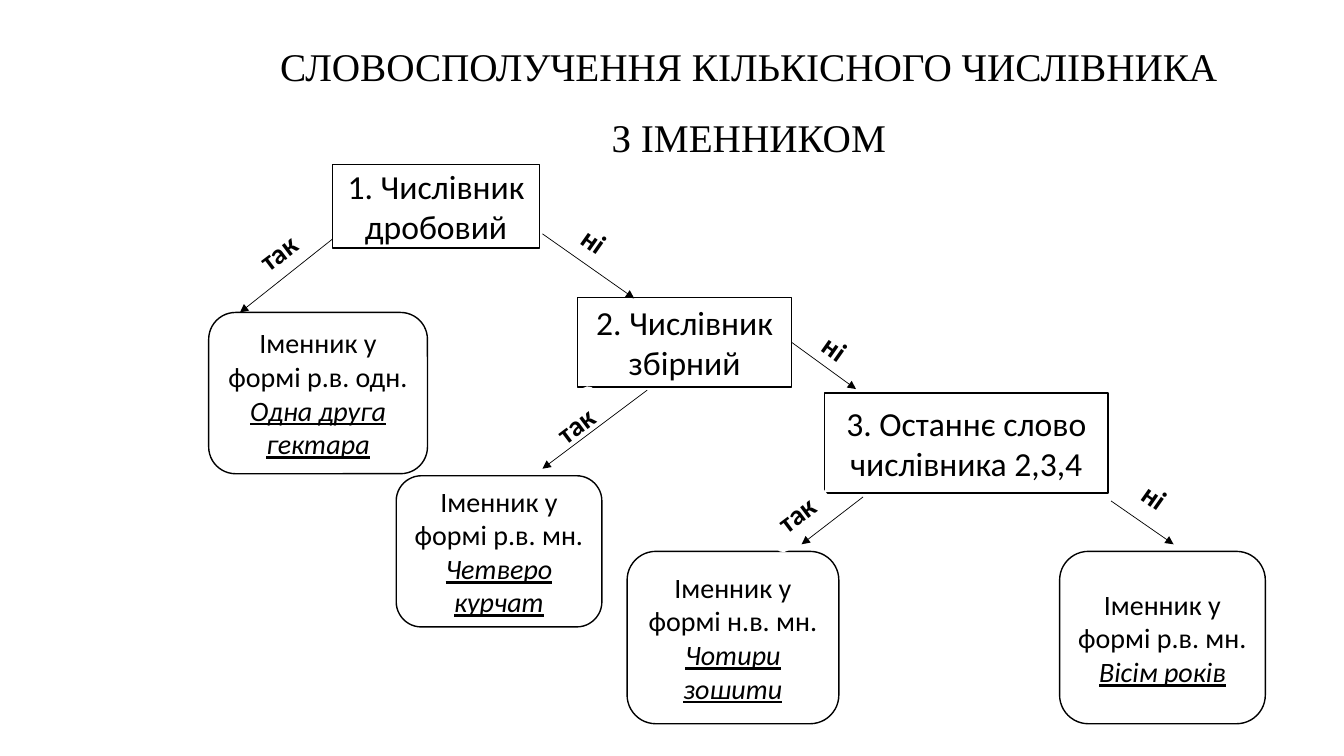
"""Builds a decision tree slide on Ukrainian numeral and noun phrases."""
from lxml import etree
from pptx import Presentation
from pptx.dml.color import RGBColor
from pptx.enum.shapes import MSO_CONNECTOR, MSO_SHAPE
from pptx.enum.text import MSO_ANCHOR, PP_ALIGN
from pptx.oxml.ns import qn
from pptx.util import Inches, Pt

RECTANGLE = MSO_SHAPE.RECTANGLE
ROUNDED = MSO_SHAPE.ROUNDED_RECTANGLE
STRAIGHT = MSO_CONNECTOR.STRAIGHT
MIDDLE = MSO_ANCHOR.MIDDLE
CENTER = PP_ALIGN.CENTER
RIGHT_SIDE = 3
CELLS_PER_INCH = 10
BLACK, WHITE = "000000", "FFFFFF"
YES, NO = "так", "ні"
YES_TURN, NO_TURN = -37, 35.1

TITLE = ["СЛОВОСПОЛУЧЕННЯ КІЛЬКІСНОГО ЧИСЛІВНИКА", "З ІМЕННИКОМ"]
RESULTS = [
    ((20.7, 31, 21.7, 16), "Іменник у формі р.в. одн.", "Одна друга гектара"),
    ((39.3, 47.2, 20.4, 15), "Іменник у формі р.в. мн.", "Четверо курчат"),
    ((62.2, 54.7, 21, 17.1), "Іменник у формі н.в. мн.", "Чотири зошити"),
    ((105.1, 54.7, 20.4, 17.1), "Іменник у формі р.в. мн.", "Вісім років"),
]
QUESTIONS = [
    ((33, 16.3, 20.5, 8.3), "1. Числівник дробовий"),
    ((57.3, 29.5, 21.2, 8.9), "2. Числівник збірний"),
    ((81.8, 39, 28.1, 9.9), "3. Останнє слово числівника 2,3,4"),
]
LABELS = [
    ((24.4, 22.8, 6.3, 4.4), YES), ((55.3, 21.4, 7.3, 4.9), NO),
    ((53.4, 39.7, 7.3, 4.9), YES), ((79.2, 32.1, 7.3, 4.9), NO),
    ((75.3, 48.5, 7.3, 4.9), YES), ((110.9, 46.8, 7.3, 4.9), NO),
]
ARROWS = [
    (33, 23.7, 23.8, 31), (53.8, 23.2, 62.9, 29.6),
    (64.2, 38.7, 53.8, 46.5), (85.6, 49.3, 79.5, 54),
    (110.2, 49.7, 116.4, 54),
]
COLLECTIVE_TO_LAST_WORD = (78.5, 33.95, 84.9, 38.6)


def color(value):
    """Turn a hex string into a colour."""
    return RGBColor.from_string(value)


def grid(cells):
    """Turn positions on the grid into slide lengths."""
    return [Inches(cell / CELLS_PER_INCH) for cell in cells]


def write(shape, lines, size, font="Calibri", spacing=None):
    """Write centred paragraphs into a shape and return them."""
    frame = shape.text_frame
    frame.word_wrap = True
    frame.text = "\n".join(lines)
    for para in frame.paragraphs:
        para.alignment = CENTER
        para.line_spacing = spacing
        for span in para.runs:
            span.font.name = font
            span.font.size = Pt(size)
            span.font.color.rgb = color(BLACK)
    return frame.paragraphs


def add_title(page, place, lines):
    """Add the slide heading."""
    write(page.shapes.add_textbox(*grid(place)), lines, 28, "Times New Roman", 1.5)


def add_box(page, kind, place, outlined=True):
    """Add a white box with an optional black outline."""
    box = page.shapes.add_shape(kind, *grid(place))
    box.shadow.inherit = False
    box.fill.solid()
    box.fill.fore_color.rgb = color(WHITE)
    if outlined:
        box.line.color.rgb = color(BLACK)
        box.line.width = Pt(1)
    else:
        box.line.fill.background()
    box.text_frame.vertical_anchor = MIDDLE
    return box


def add_question(page, place, text):
    """Add a decision box."""
    box = add_box(page, RECTANGLE, place)
    write(box, [text], 24)
    return box


def add_result(page, place, rule, example):
    """Add a rounded box with a rule and its underlined example."""
    paragraphs = write(add_box(page, ROUNDED, place), [rule, example], 20)
    for span in paragraphs[1].runs:
        span.font.italic = True
        span.font.underline = True


def add_label(page, place, answer):
    """Add a tilted answer beside an arrow."""
    box = add_box(page, ROUNDED, place, outlined=False)
    box.rotation = YES_TURN if answer == YES else NO_TURN
    for para in write(box, [answer], 20):
        para.runs[0].font.bold = True
    box.text_frame.word_wrap = False


def add_arrow(page, ends):
    """Add a thin arrow between two grid points."""
    arrow = page.shapes.add_connector(STRAIGHT, *grid(ends))
    arrow.line.color.rgb = color(BLACK)
    arrow.line.width = Pt(0.5)
    etree.SubElement(arrow.line._get_or_add_ln(), qn("a:tailEnd"), type="triangle")
    etree.SubElement(arrow._element.spPr, qn("a:effectLst"))
    return arrow


def main():
    """Build and save the slide."""
    deck = Presentation()
    deck.slide_width, deck.slide_height = Inches(13.33), Inches(7.5)
    page = deck.slides.add_slide(deck.slide_layouts[6])
    add_title(page, (21.8, 1.4, 104.9, 13.8), TITLE)
    for result in RESULTS:
        add_result(page, *result)
    questions = [add_question(page, *question) for question in QUESTIONS]
    for label in LABELS:
        add_label(page, *label)
    for ends in ARROWS:
        add_arrow(page, ends)
    joined = add_arrow(page, COLLECTIVE_TO_LAST_WORD)
    joined.begin_connect(questions[1], RIGHT_SIDE)
    deck.save("out.pptx")


if __name__ == "__main__":
    main()
